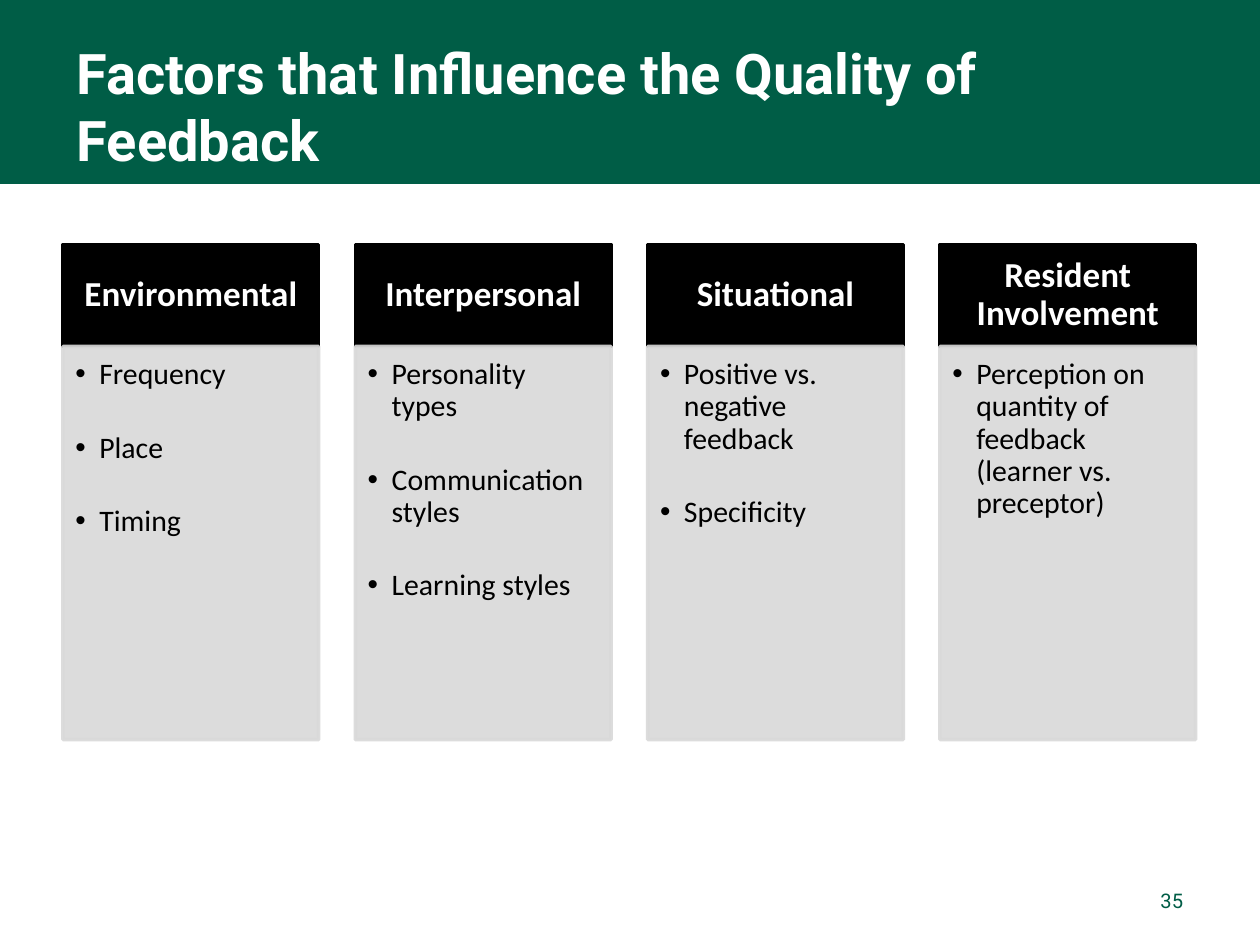
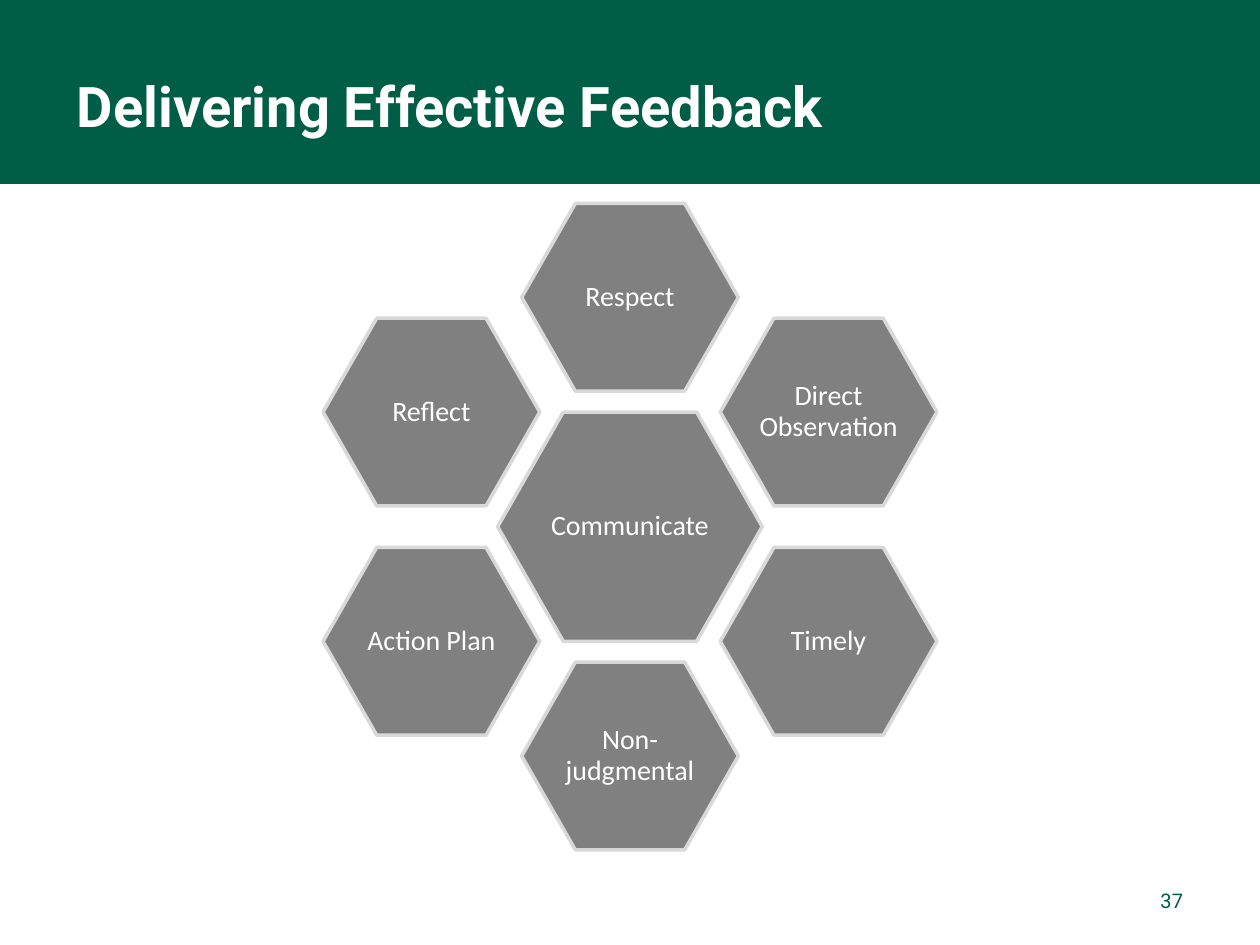
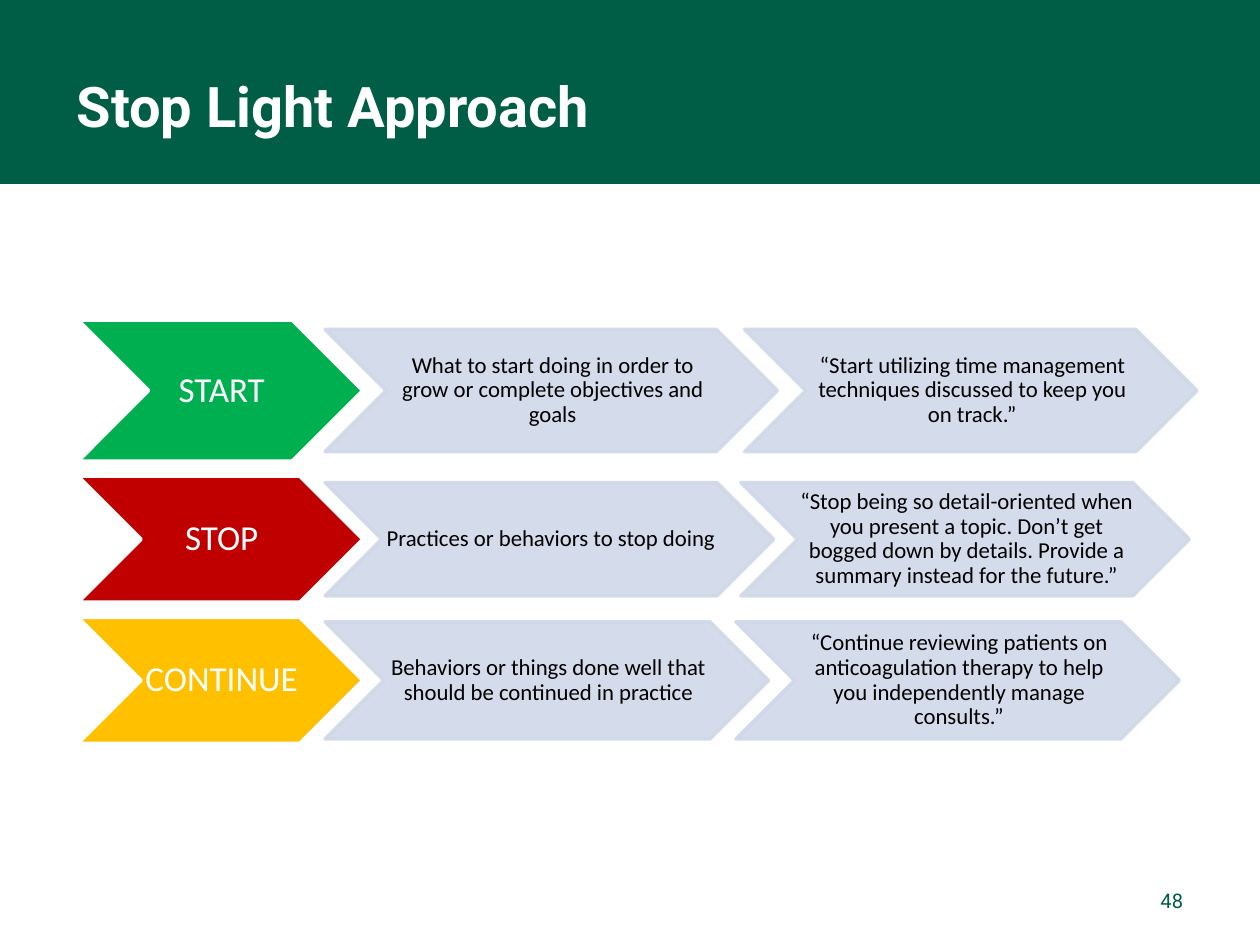
import math

import pptx
import pptx.dml.color
import pptx.enum.shapes
import pptx.enum.text
import pptx.oxml.ns
import pptx.util
from lxml import etree

COLUMNS, ROWS = 100, 75
WIDTH, HEIGHT = pptx.util.Inches(10), pptx.util.Inches(7.5)

GREEN, WHITE, BLACK = "005D46", "FFFFFF", "000000"
GRAY, PALE_GRAY, PALE_BLUE = "808080", "D9D9D9", "D0D8E8"
HEAD_FONT, BODY_FONT = "Roboto", "Calibri"

SHAPE = pptx.enum.shapes.MSO_SHAPE
ALIGN = pptx.enum.text.PP_ALIGN
ANCHOR = pptx.enum.text.MSO_ANCHOR
qn = pptx.oxml.ns.qn

FACTORS = {
    "Environmental": ["Frequency", "Place", "Timing"],
    "Interpersonal": ["Personality types", "Communication styles", "Learning styles"],
    "Situational": ["Positive vs. negative feedback", "Specificity"],
    "Resident Involvement": ["Perception on quantity of feedback (learner vs. preceptor)"],
}

PRACTICES = ["Respect", "Direct Observation", "Timely",
             "Non-judgmental", "Action Plan", "Reflect"]

# label, colour, row height, note width, note height, notes
LIGHTS = [
    ("START", "00B050", 11.2, 35.9, 9.7,
     ["What to start doing in order to grow or complete objectives and goals",
      "“Start utilizing time management techniques discussed to keep you on track.”"]),
    ("STOP", "C00000", 10, 35.6, 9,
     ["Practices or behaviors to stop doing",
      "“Stop being so detail-oriented when you present a topic. Don’t get bogged "
      "down by details. Provide a summary instead for the future.”"]),
    ("CONTINUE", "FFC000", 10, 35.2, 9.3,
     ["Behaviors or things done well that should be continued in practice",
      "“Continue reviewing patients on anticoagulation therapy to help you "
      "independently manage consults.”"]),
]


def rgb(value):
    return pptx.dml.color.RGBColor.from_string(value)


def paint(fill, color, opacity):
    fill.solid()
    fill.fore_color.rgb = rgb(color)
    if opacity < 100:
        clr = fill._xPr.find(".//" + qn("a:srgbClr"))
        etree.SubElement(clr, qn("a:alpha"), val=str(opacity * 1000))


class Deck:
    """Holds the shared style and the slide being built; lengths are grid cells."""

    def __init__(self):
        self.prs = pptx.Presentation()
        self.prs.slide_width, self.prs.slide_height = WIDTH, HEIGHT
        self.slide = None

    def place(self, x, y, w, h):
        return (round(x * WIDTH / COLUMNS), round(y * HEIGHT / ROWS),
                round(w * WIDTH / COLUMNS), round(h * HEIGHT / ROWS))

    def new_slide(self, title, number):
        self.slide = self.prs.slides.add_slide(self.prs.slide_layouts[6])
        self.shape(SHAPE.RECTANGLE, (0, 0, COLUMNS, 14.6), GREEN)
        self.label((5, 2.1, 90, 12.5), title, 32, WHITE, ALIGN.LEFT, bold=True)
        self.label((71.7, 69.5, 23.3, 4), str(number), 11.5, GREEN, ALIGN.RIGHT)

    def shape(self, kind, box, color, line=None, opacity=100):
        sp = self.slide.shapes.add_shape(kind, *self.place(*box))
        sp.shadow.inherit = False
        paint(sp.fill, color, opacity)
        if line:
            sp.line.width = pptx.util.Pt(2)
            paint(sp.line.fill, line, opacity)
        else:
            sp.line.fill.background()
        return sp

    def label(self, box, text, size, color, align, bold=False):
        sp = self.slide.shapes.add_textbox(*self.place(*box))
        self.set_text(sp, [text], size, color, (0.11, 0.06, 0.11, 0.06), align,
                      HEAD_FONT, bold, spacing=1)

    def set_text(self, sp, lines, size, color, insets, align=ALIGN.CENTER,
                 font=BODY_FONT, bold=False, anchor=ANCHOR.MIDDLE, spacing=0.9):
        tf = sp.text_frame
        tf.word_wrap = True
        tf.vertical_anchor = anchor
        (tf.margin_left, tf.margin_top,
         tf.margin_right, tf.margin_bottom) = map(pptx.util.Inches, insets)
        tf.text = "\n".join(lines)
        for p in tf.paragraphs:
            p.alignment = align
            p.line_spacing = spacing
            for r in p.runs:
                r.font.name, r.font.size, r.font.bold = font, pptx.util.Pt(size), bold
                r.font.color.rgb = rgb(color)

    def bullets(self, sp, items, size, gap):
        self.set_text(sp, items, size, BLACK, (0.1, 0.1, 0.13, 0.15),
                      ALIGN.LEFT, anchor=ANCHOR.TOP)
        indent = pptx.util.Inches(0.19)
        for i, p in enumerate(sp.text_frame.paragraphs):
            if i:
                p.space_before = pptx.util.Pt(gap)
            pPr = p._p.get_or_add_pPr()
            pPr.set("marL", str(indent))
            pPr.set("indent", str(-indent))
            etree.SubElement(pPr, qn("a:buFont"), typeface="Arial")
            etree.SubElement(pPr, qn("a:buChar"), char="•")

    def factor(self, x, heading, items):
        """A headed column of bullets."""
        w, top, head_h, body_h = 20.3, 19.4, 8.1, 31.2
        head = self.shape(SHAPE.RECTANGLE, (x, top, w, head_h), BLACK, BLACK)
        self.set_text(head, [heading], 20, WHITE, (0.16, 0.09, 0.16, 0.09), bold=True)
        body = self.shape(SHAPE.RECTANGLE, (x, top + head_h, w, body_h),
                          PALE_GRAY, PALE_GRAY, 90)
        self.bullets(body, items, 17, 23.5)

    def hexagon(self, cx, cy, w, h, text):
        sp = self.shape(SHAPE.HEXAGON, (cx - w / 2, cy - h / 2, w, h), GRAY, PALE_GRAY)
        sp.adjustments[0] = 0.286
        self.set_text(sp, [text], 16, WHITE, (0.02,) * 4)

    def chevron(self, box, text, size, color, fill, line, opacity=100):
        sp = self.shape(SHAPE.CHEVRON, box, fill, line, opacity)
        self.set_text(sp, [text], size, color, (0.02, 0.01, 0, 0.01))


def add_factors(deck):
    deck.new_slide("Factors that Influence the Quality of Feedback", 35)
    for i, (heading, items) in enumerate(FACTORS.items()):
        deck.factor(5 + 23.2 * i, heading, items)


def add_practices(deck):
    deck.new_slide("Delivering Effective Feedback", 37)
    cx, cy, radius = 50, 41.8, 18.2
    deck.hexagon(cx, cy, 21, 18.2, "Communicate")
    for i, practice in enumerate(PRACTICES):
        angle = math.tau * i / len(PRACTICES)
        deck.hexagon(cx + radius * math.sin(angle), cy - radius * math.cos(angle),
                     17.2, 14.9, practice)


def add_lights(deck):
    deck.new_slide("Stop Light Approach", 48)
    y, gap, overlap = 25.4, 1.2, 2.6
    for label, color, h, note_w, note_h, notes in LIGHTS:
        deck.chevron((6.2, y, 22.6, h), label, 20, WHITE, color, WHITE)
        for i, note in enumerate(notes):
            box = (25.8 + i * (note_w - overlap), y + (h - note_h) / 2, note_w, note_h)
            deck.chevron(box, note, 13, BLACK, PALE_BLUE, PALE_BLUE, 90)
        y += h + gap


def main():
    deck = Deck()
    add_factors(deck)
    add_practices(deck)
    add_lights(deck)
    deck.prs.save("out.pptx")


if __name__ == "__main__":
    main()
